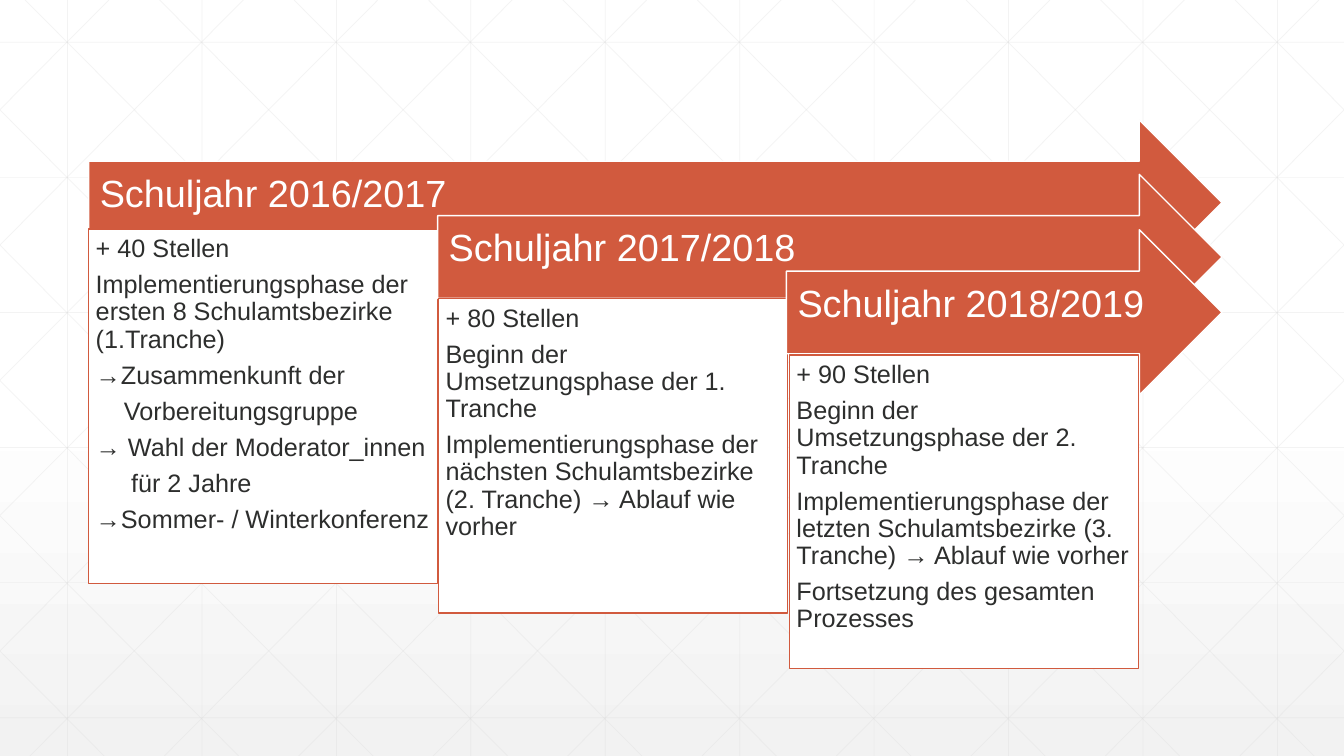
from dataclasses import dataclass

from lxml.etree import SubElement
from pptx import Presentation
from pptx.dml.color import RGBColor
from pptx.enum.shapes import MSO_CONNECTOR as Connector, MSO_SHAPE as Preset
from pptx.enum.text import MSO_ANCHOR as Anchor, PP_ALIGN as Align
from pptx.oxml.ns import qn
from pptx.shapes.autoshape import Shape
from pptx.slide import Slide
from pptx.util import Inches, Pt

COLORS = {"accent": "D15A3E", "white": "FFFFFF", "text": "2D2E2D",
          "grid": "D9D9D9", "shade": "F2F2F2"}
WIDTH, HEIGHT = 13.33, 7.5
GRID_STEP = 4 / 3
DIAGONAL_RUN = 7.45
ARROW_RIGHT, ARROW_HEIGHT = 12.12, 1.64
BOX_WIDTH = 3.46
PARAGRAPH_FORMAT = {"alignment": Align.LEFT, "line_spacing": 0.9}


@dataclass
class Line:
    text: str
    indent: float = 0


@dataclass
class SchoolYear:
    title: str
    arrow_left: float
    arrow_top: float
    box_left: float
    box_top: float
    box_height: float
    lines: list[Line]


@dataclass
class TextStyle:
    size: float
    color: str
    anchor: Anchor
    margins: tuple[float, float, float, float]


TITLE_STYLE = TextStyle(27, "white", Anchor.MIDDLE, (0.11, 0.11, 0.28, 0.26))
BODY_STYLE = TextStyle(18, "text", Anchor.TOP, (0.07, 0.07, 0.07, 0.07))

SCHOOL_YEARS = [
    SchoolYear("Schuljahr 2016/2017", 0.88, 1.19, 0.88, 2.27, 3.52, [
        Line("+ 40 Stellen"),
        Line("Implementierungsphase der ersten 8 Schulamtsbezirke (1.Tranche)"),
        Line("→Zusammenkunft der"),
        Line("Vorbereitungsgruppe", 0.28),
        Line("→ Wahl der Moderator_innen"),
        Line("für 2 Jahre", 0.35),
        Line("→Sommer- / Winterkonferenz"),
    ]),
    SchoolYear("Schuljahr 2017/2018", 4.34, 1.73, 4.35, 2.96, 3.12, [
        Line("+ 80 Stellen"),
        Line("Beginn der Umsetzungsphase der 1. Tranche"),
        Line("Implementierungsphase der nächsten Schulamtsbezirke "
             "(2. Tranche) → Ablauf wie vorher"),
    ]),
    SchoolYear("Schuljahr 2018/2019", 7.8, 2.28, 7.83, 3.52, 3.11, [
        Line("+ 90 Stellen"),
        Line("Beginn der Umsetzungsphase der 2. Tranche"),
        Line("Implementierungsphase der letzten Schulamtsbezirke "
             "(3. Tranche) → Ablauf wie vorher"),
        Line("Fortsetzung des gesamten Prozesses"),
    ]),
]


def color(name: str) -> RGBColor:
    return RGBColor.from_string(COLORS[name])


def paint_background(slide: Slide) -> None:
    fill = slide.background.fill
    fill.gradient()
    fill.gradient_angle = 270
    for stop, position, name in zip(fill.gradient_stops, (0.53, 1), ("white", "shade")):
        stop.position = position
        stop.color.rgb = color(name)


def draw_grid_line(slide: Slide, x1: float, y1: float, x2: float, y2: float) -> None:
    line = slide.shapes.add_connector(
        Connector.STRAIGHT, Inches(x1), Inches(y1), Inches(x2), Inches(y2))
    line.line.color.rgb = color("grid")
    line.line.width = Pt(0.5)
    properties = line._element.spPr
    SubElement(next(properties.iter(qn("a:srgbClr"))), qn("a:alpha"), val="30000")
    SubElement(properties, qn("a:effectLst"))


def draw_grid(slide: Slide) -> None:
    for column in range(10):
        x = 0.67 + column * GRID_STEP
        draw_grid_line(slide, x, 0, x, HEIGHT)
    for row in range(6):
        y = 0.42 + row * 1.34
        draw_grid_line(slide, 0, y, WIDTH, y)
    # Diagonals are clipped at the slide edges and mirrored
    slope = HEIGHT / DIAGONAL_RUN
    for index in range(-5, 10):
        start = 0.25 + index * GRID_STEP
        x1, x2 = max(start, 0), min(start + DIAGONAL_RUN, WIDTH)
        y1, y2 = (x1 - start) * slope, (x2 - start) * slope
        draw_grid_line(slide, x1, y1, x2, y2)
        draw_grid_line(slide, WIDTH - x1, y1, WIDTH - x2, y2)


def draw_shape(slide: Slide, preset: Preset, left: float, top: float, width: float,
               height: float, fill: str, outline: str) -> Shape:
    shape = slide.shapes.add_shape(
        preset, Inches(left), Inches(top), Inches(width), Inches(height))
    shape.shadow.inherit = False
    shape.fill.solid()
    shape.fill.fore_color.rgb = color(fill)
    shape.line.color.rgb = color(outline)
    shape.line.width = Pt(1)
    return shape


def write_lines(shape: Shape, lines: list[Line], style: TextStyle) -> None:
    frame = shape.text_frame
    frame.word_wrap = True
    frame.vertical_anchor = style.anchor
    for side, margin in zip(("left", "top", "right", "bottom"), style.margins):
        setattr(frame, f"margin_{side}", Inches(margin))
    paragraph_format = PARAGRAPH_FORMAT | {"space_after": Pt(style.size * 0.35)}
    font_format = {"name": "Arial", "size": Pt(style.size)}
    for index, line in enumerate(lines):
        paragraph = frame.add_paragraph() if index else frame.paragraphs[0]
        for name, value in paragraph_format.items():
            setattr(paragraph, name, value)
        if line.indent:
            paragraph._p.get_or_add_pPr().set("marL", str(Inches(line.indent)))
        run = paragraph.add_run()
        run.text = line.text
        for name, value in font_format.items():
            setattr(run.font, name, value)
        run.font.color.rgb = color(style.color)


def draw_school_year(slide: Slide, year: SchoolYear) -> None:
    arrow = draw_shape(slide, Preset.RIGHT_ARROW, year.arrow_left, year.arrow_top,
                       ARROW_RIGHT - year.arrow_left, ARROW_HEIGHT, "accent", "white")
    write_lines(arrow, [Line(year.title)], TITLE_STYLE)
    box = draw_shape(slide, Preset.RECTANGLE, year.box_left, year.box_top,
                     BOX_WIDTH, year.box_height, "white", "accent")
    write_lines(box, year.lines, BODY_STYLE)


def main() -> None:
    presentation = Presentation()
    presentation.slide_width = Inches(WIDTH)
    presentation.slide_height = Inches(HEIGHT)
    slide = presentation.slides.add_slide(presentation.slide_layouts[6])

    # Backdrop
    paint_background(slide)
    draw_grid(slide)

    # Staggered school years, each overlapping the one before
    for year in SCHOOL_YEARS:
        draw_school_year(slide, year)

    presentation.save("out.pptx")


if __name__ == "__main__":
    main()
